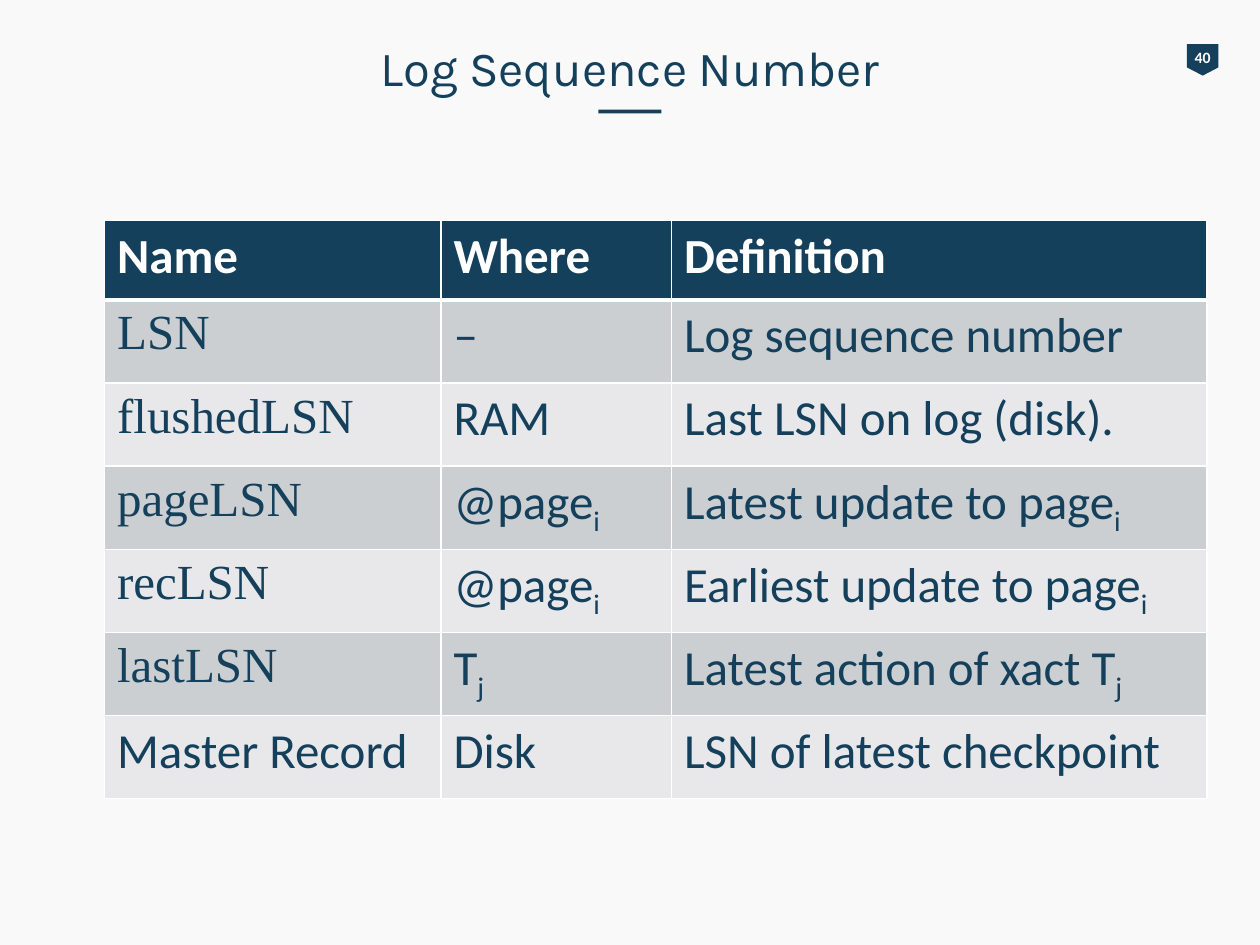
from pptx import Presentation
from pptx.dml.color import RGBColor
from pptx.enum.shapes import MSO_SHAPE
from pptx.enum.text import MSO_ANCHOR, PP_ALIGN
from pptx.oxml.ns import qn
from pptx.util import Inches, Pt
from lxml.etree import SubElement

COLORS = {
    "background": "F9F9F9",
    "accent": "15405B",
    "text": "14405C",
    "white": "FFFFFF",
    "odd_row": "CCCFD2",
    "even_row": "E8E8EA",
}
COLUMN_WIDTHS = [2.67, 1.83, 4.25]
HEADER_HEIGHT = 0.63
ROW_HEIGHT = 0.66
SERIF_NAMES = {"LSN", "flushedLSN", "pageLSN", "recLSN", "lastLSN"}
LOG_ROWS = [
    ("Name", "Where", "Definition"),
    ("LSN", "–", "Log sequence number"),
    ("flushedLSN", "RAM", "Last LSN on log (disk)."),
    ("pageLSN", "@page_i", "Latest update to page_i"),
    ("recLSN", "@page_i", "Earliest update to page_i"),
    ("lastLSN", "T_j", "Latest action of xact T_j"),
    ("Master Record", "Disk", "LSN of latest checkpoint"),
]


def rgb(name):
    """Return the named colour."""
    return RGBColor.from_string(COLORS[name])


def write_text(frame, text, size=28, font="Calibri", color="text", bold=False, align=PP_ALIGN.LEFT):
    """Write formatted text, setting what follows an underscore as a subscript."""
    paragraph = frame.paragraphs[0]
    paragraph.alignment = align
    for index, part in enumerate(text.split("_")):
        run = paragraph.add_run()
        run.text = part
        run.font.size = Pt(size)
        run.font.name = font
        run.font.bold = bold
        run.font.color.rgb = rgb(color)
        if index:
            run._r.get_or_add_rPr().set("baseline", "-25000")


def add_label(slide, text, left, top, width, height, wrap=True, **text_format):
    """Add a centred text box anchored in its middle."""
    label = slide.shapes.add_textbox(Inches(left), Inches(top), Inches(width), Inches(height))
    label.text_frame.word_wrap = wrap
    label.text_frame.vertical_anchor = MSO_ANCHOR.MIDDLE
    write_text(label.text_frame, text, align=PP_ALIGN.CENTER, **text_format)


def add_solid(slide, preset, left, top, width, height):
    """Add a plain accent-coloured shape."""
    solid = slide.shapes.add_shape(preset, Inches(left), Inches(top), Inches(width), Inches(height))
    solid.shadow.inherit = False
    solid.fill.solid()
    solid.fill.fore_color.rgb = rgb("accent")
    solid.line.fill.background()
    return solid


def set_borders(cell, top, bottom):
    """Draw white borders around a cell, with given top and bottom widths."""
    properties = cell._tc.get_or_add_tcPr()
    for tag, width in (("lnL", 1), ("lnR", 1), ("lnT", top), ("lnB", bottom)):
        border = SubElement(properties, qn(f"a:{tag}"), w=str(Pt(width)))
        border_fill = SubElement(border, qn("a:solidFill"))
        SubElement(border_fill, qn("a:srgbClr"), val=COLORS["white"])


def fill_cell(cell, text, row):
    """Style one table cell by its row and write its text."""
    header = row == 0
    set_borders(cell, top=3 if row == 1 else 1, bottom=3 if header else 1)
    cell.fill.solid()
    cell.fill.fore_color.rgb = rgb("accent" if header else "odd_row" if row % 2 else "even_row")
    write_text(
        cell.text_frame,
        text,
        font="Times New Roman" if text in SERIF_NAMES else "Calibri",
        color="white" if header else "text",
        bold=header,
    )


def add_log_table(slide, left, top):
    """Add the table of log sequence numbers."""
    heights = [HEADER_HEIGHT] + [ROW_HEIGHT] * (len(LOG_ROWS) - 1)
    table = slide.shapes.add_table(
        len(LOG_ROWS), len(COLUMN_WIDTHS), Inches(left), Inches(top),
        Inches(sum(COLUMN_WIDTHS)), Inches(sum(heights)),
    ).table
    for column, width in zip(table.columns, COLUMN_WIDTHS):
        column.width = Inches(width)
    for row, (height, texts) in enumerate(zip(heights, LOG_ROWS)):
        table.rows[row].height = Inches(height)
        for column, text in enumerate(texts):
            fill_cell(table.cell(row, column), text, row)


def add_page_badge(slide):
    """Add the page number on its downward-pointing badge."""
    badge = add_solid(slide, MSO_SHAPE.PENTAGON, 9.42, 0.35, 0.25, 0.25)
    badge.rotation = 90
    badge.adjustments[0] = 0.26
    add_label(slide, "40", 9.38, 0.33, 0.33, 0.25, wrap=False, size=9, color="white", bold=True)


def main():
    """Build and save the slide."""
    deck = Presentation()
    deck.slide_width = Inches(10)
    deck.slide_height = Inches(7.5)
    slide = deck.slides.add_slide(deck.slide_layouts[6])
    slide.background.fill.solid()
    slide.background.fill.fore_color.rgb = rgb("background")
    add_page_badge(slide)
    add_label(slide, "Log Sequence Number", 0.5, 0.25, 9, 0.57, font="Karla")
    add_solid(slide, MSO_SHAPE.RECTANGLE, 4.75, 0.87, 0.5, 0.03)
    add_log_table(slide, 0.83, 1.75)
    deck.save("out.pptx")


if __name__ == "__main__":
    main()
